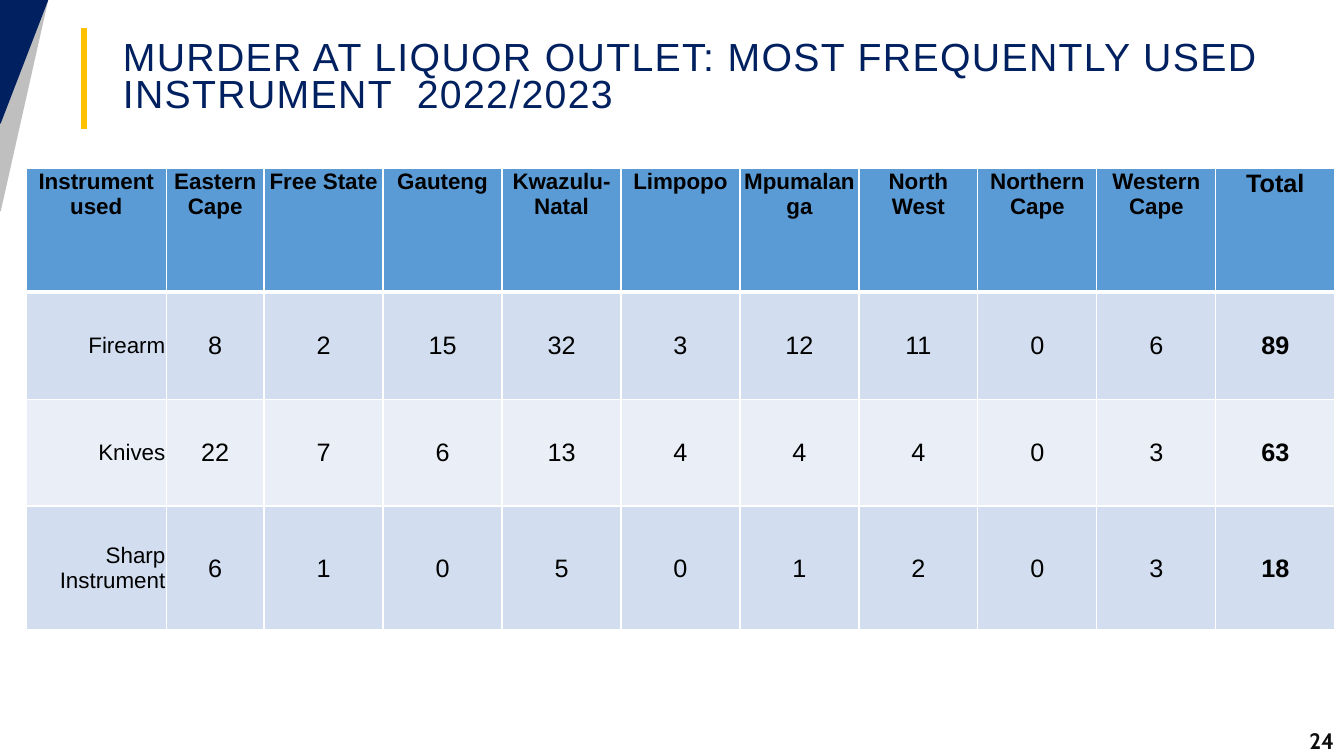
from pptx import Presentation
from pptx.dml.color import RGBColor
from pptx.enum.shapes import MSO_CONNECTOR as Connector, MSO_SHAPE as Shape
from pptx.enum.text import MSO_ANCHOR as Anchor, PP_ALIGN as Align
from pptx.oxml.ns import qn
from pptx.util import Inches, Pt
from lxml.etree import SubElement

COLORS = {
    "navy": "002060", "gray": "BFBFBF", "gold": "FFC000", "header": "5B9BD5",
    "band": "D2DEEF", "light": "EAEFF7", "white": "FFFFFF", "black": "000000",
    "number": "0D0D0D",
}
HEADERS = ["Instrument used", "Eastern Cape", "Free State", "Gauteng",
           "Kwazulu-Natal", "Limpopo", "Mpumalanga", "North West",
           "Northern Cape", "Western Cape", "Total"]
MURDERS = [
    ["Firearm", 8, 2, 15, 32, 3, 12, 11, 0, 6, 89],
    ["Knives", 22, 7, 6, 13, 4, 4, 4, 0, 3, 63],
    ["Sharp Instrument", 6, 1, 0, 5, 0, 1, 2, 0, 3, 18],
]
COLUMN_WIDTHS = [1.39, 0.97] + [1.18] * 9
ROW_HEIGHTS = [1.23, 1.06, 1.06, 1.23]


class SlideBuilder:
    """Draws styled elements on the current slide."""

    def __init__(self, slide, font="Arial"):
        self.slide = slide
        self.font = font

    def color(self, name):
        return RGBColor.from_string(COLORS[name])

    def style(self, paragraph, size, color, bold=False, align=Align.LEFT, font=None):
        paragraph.alignment = align
        paragraph.font.name = font or self.font
        paragraph.font.size = Pt(size)
        paragraph.font.bold = bold
        paragraph.font.color.rgb = self.color(color)

    def line(self, start, end, color, width):
        points = [Inches(value) for value in (*start, *end)]
        line = self.slide.shapes.add_connector(Connector.STRAIGHT, *points)
        line.line.color.rgb = self.color(color)
        line.line.width = Pt(width)
        SubElement(line._element.spPr, qn("a:effectLst"))

    def corner(self, width, height, color):
        shape = self.slide.shapes.add_shape(
            Shape.RIGHT_TRIANGLE, 0, 0, Inches(width), Inches(height))
        shape.shadow.inherit = False
        shape._element.spPr.xfrm.set("flipV", "1")
        shape.fill.solid()
        shape.fill.fore_color.rgb = self.color(color)
        shape.line.color.rgb = self.color(color)
        shape.line.width = Pt(1.25)

    def text(self, box, content, size, color, spacing=None, tracking=0, **style):
        shape = self.slide.shapes.add_textbox(*[Inches(value) for value in box])
        frame = shape.text_frame
        frame.word_wrap = True
        frame.vertical_anchor = Anchor.MIDDLE
        paragraph = frame.paragraphs[0]
        paragraph.text = content
        paragraph.line_spacing = spacing
        self.style(paragraph, size, color, **style)
        if tracking:
            paragraph.runs[0].font._element.set("spc", str(tracking * 100))

    def borders(self, cell, top, bottom):
        properties = cell._tc.get_or_add_tcPr()
        for side, width in (("L", 1), ("R", 1), ("T", top), ("B", bottom)):
            border = SubElement(properties, qn(f"a:ln{side}"), w=str(Pt(width)))
            fill = SubElement(border, qn("a:solidFill"))
            SubElement(fill, qn("a:srgbClr"), val=COLORS["white"])

    def cell(self, cell, content, row, column):
        is_header = row == 0
        is_label = column == 0
        is_total = column == len(HEADERS) - 1
        self.borders(cell, 3 if row == 1 else 1, 3 if is_header else 1)
        cell.fill.solid()
        fill = "header" if is_header else "band" if row % 2 else "light"
        cell.fill.fore_color.rgb = self.color(fill)
        cell.margin_left = cell.margin_right = cell.margin_top = Inches(0.01)
        cell.margin_bottom = 0
        cell.vertical_anchor = Anchor.TOP if is_header else Anchor.MIDDLE
        paragraph = cell.text_frame.paragraphs[0]
        paragraph.text = str(content)
        size = 16 if is_label or (is_header and not is_total) else 18
        align = Align.RIGHT if is_label and not is_header else Align.CENTER
        self.style(paragraph, size, "black", is_header or is_total, align)

    def table(self, left, top, rows):
        table = self.slide.shapes.add_table(
            len(rows), len(HEADERS), Inches(left), Inches(top),
            Inches(sum(COLUMN_WIDTHS)), Inches(sum(ROW_HEIGHTS))).table
        for column, width in zip(table.columns, COLUMN_WIDTHS):
            column.width = Inches(width)
        for row, height in zip(table.rows, ROW_HEIGHTS):
            row.height = Inches(height)
        for row, values in enumerate(rows):
            for column, value in enumerate(values):
                self.cell(table.cell(row, column), value, row, column)


def main():
    presentation = Presentation()
    presentation.slide_width = Inches(13.33)
    presentation.slide_height = Inches(7.5)
    slide = presentation.slides.add_slide(presentation.slide_layouts[6])
    builder = SlideBuilder(slide)
    builder.line((0.83, 1.28), (0.83, 0.28), "gold", 4.5)
    builder.corner(0.47, 2.09, "gray")
    builder.corner(0.47, 1.22, "navy")
    builder.text((1.12, 0.38, 11.61, 0.8),
                 "MURDER AT LIQUOR OUTLET: MOST FREQUENTLY USED INSTRUMENT  2022/2023",
                 28, "navy", spacing=0.8, tracking=1)
    builder.table(0.26, 1.67, [HEADERS] + MURDERS)
    builder.text((12.27, 7.2, 1.06, 0.3), "24", 16, "number",
                 bold=True, align=Align.RIGHT, font="Cabin")
    presentation.save("out.pptx")


if __name__ == "__main__":
    main()
